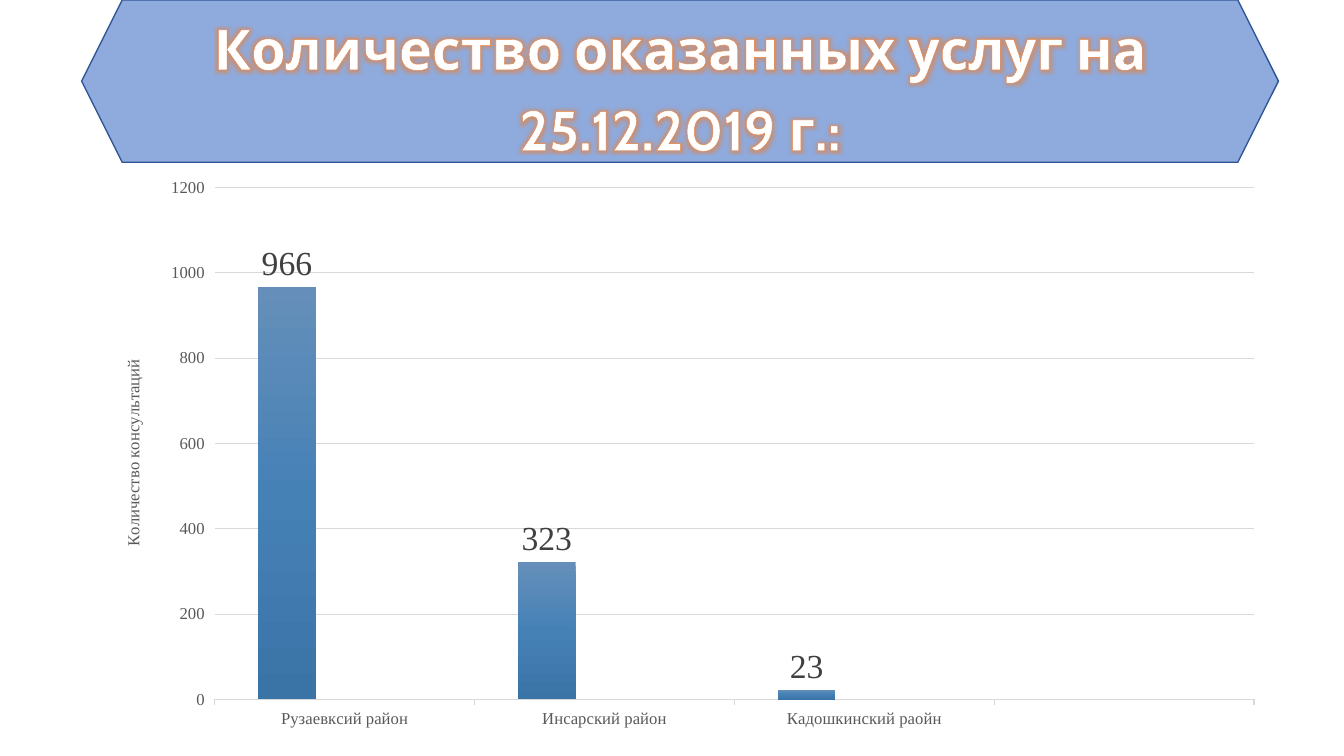
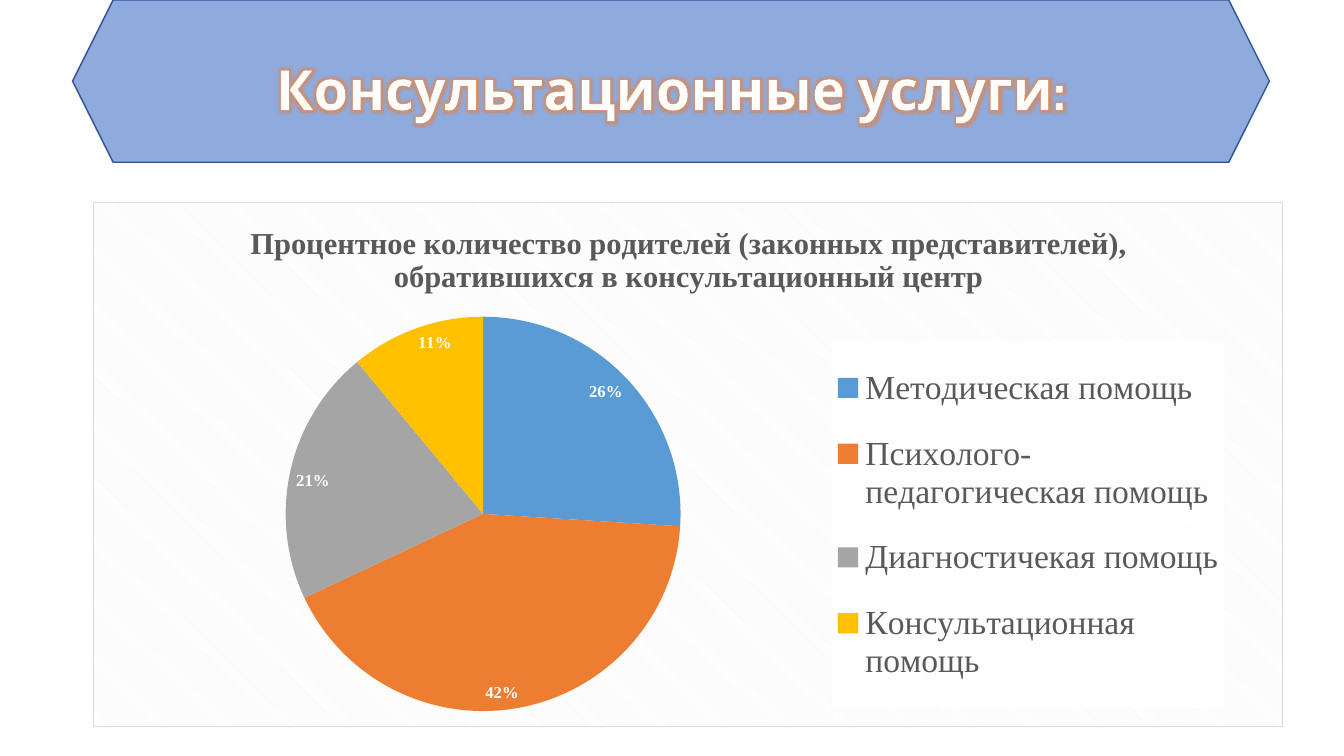
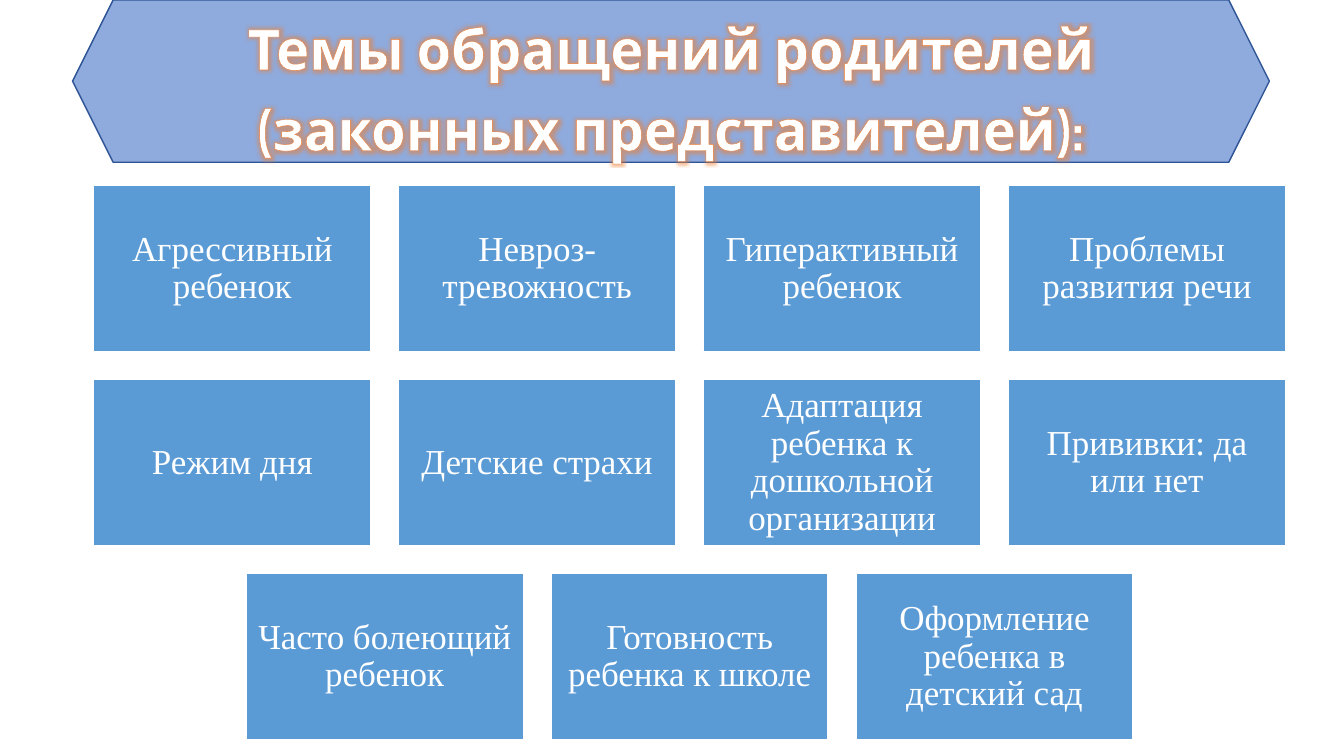
from dataclasses import dataclass

from pptx import Presentation
from pptx.chart.data import CategoryChartData
from pptx.dml.color import RGBColor
from pptx.enum.chart import (
    XL_CHART_TYPE, XL_LABEL_POSITION, XL_LEGEND_POSITION, XL_TICK_MARK,
)
from pptx.enum.shapes import MSO_SHAPE
from pptx.enum.text import MSO_ANCHOR, PP_ALIGN
from pptx.oxml import parse_xml
from pptx.oxml.ns import nsdecls, qn
from pptx.util import Inches, Pt


@dataclass(frozen=True)
class Theme:
    title_font: str = "Cabin"
    body_font: str = "Times New Roman"
    white: str = "FFFFFF"
    band: str = "8FAADC"
    band_line: str = "2F5597"
    glow: str = "ED7D31"
    tile: str = "5B9BD5"
    text: str = "595959"
    label: str = "404040"
    grid: str = "D9D9D9"
    pattern: str = "F2F2F2"
    slices: tuple = ("5B9BD5", "ED7D31", "A5A5A5", "FFC000")
    gradients: tuple = (
        ("658FBA", "4681B6", "3A73A6"),
        ("71A6DB", "559BDB", "448ACA"),
        ("B8CEE9", "AAC5E8", "94AFD2"),
    )
    title_size: float = 40
    tile_size: float = 25
    large_size: float = 24
    chart_title_size: float = 21.8
    small_size: float = 11.9


THEME = Theme()


def color(value):
    return RGBColor.from_string(value)


def style_font(font, size, value, name=THEME.body_font, bold=False):
    font.name = name
    font.size = Pt(size)
    font.bold = bold
    font.color.rgb = color(value)


def add_block(slide, preset, box, fill, line):
    shape = slide.shapes.add_shape(preset, *[Inches(length) for length in box])
    shape.shadow.inherit = False
    shape.fill.solid()
    shape.fill.fore_color.rgb = color(fill)
    shape.line.color.rgb = color(line)
    shape.line.width = Pt(1)
    return shape


def write_centered(shape, text, line_spacing):
    frame = shape.text_frame
    frame.word_wrap = True
    frame.vertical_anchor = MSO_ANCHOR.MIDDLE
    paragraph = frame.paragraphs[0]
    paragraph.alignment = PP_ALIGN.CENTER
    paragraph.line_spacing = line_spacing
    run = paragraph.add_run()
    run.text = text
    return run


def add_glow(run):
    properties = run.font._element
    outline = parse_xml(
        f'<a:ln {nsdecls("a")} w="6600"><a:solidFill>'
        f'<a:srgbClr val="{THEME.glow}"/></a:solidFill></a:ln>'
    )
    glow = parse_xml(
        f'<a:effectLst {nsdecls("a")}><a:glow rad="76200">'
        f'<a:srgbClr val="{THEME.glow}"><a:alpha val="50000"/></a:srgbClr>'
        '</a:glow></a:effectLst>'
    )
    properties.insert(0, outline)
    properties.find(qn("a:solidFill")).addnext(glow)


def add_title_band(slide, text, left=0.72):
    band = add_block(slide, MSO_SHAPE.HEXAGON, (left, 0, 11.87, 1.61),
                     THEME.band, THEME.band_line)
    run = write_centered(band, text, 1.2)
    style_font(run.font, THEME.title_size, THEME.white, THEME.title_font, True)
    add_glow(run)


def make_chart_data(categories, rows):
    data = CategoryChartData()
    data.categories = categories
    for number, values in enumerate(rows, 1):
        data.add_series(f"Series {number}", values)
    return data


def add_chart(slide, kind, box, data):
    lengths = [Inches(length) for length in box]
    chart = slide.shapes.add_chart(kind, *lengths, data).chart
    chart.font.name = THEME.body_font
    chart.font.size = Pt(10)
    return chart


def make_layout(chart_box, part_box, inner=False):
    left, top, width, height = chart_box
    part_left, part_top, part_width, part_height = part_box
    fractions = ((part_left - left) / width, (part_top - top) / height,
                 part_width / width, part_height / height)
    target = '<c:layoutTarget val="inner"/>' if inner else ""
    modes = "".join(f'<c:{edge}Mode val="edge"/>' for edge in "xy")
    sizes = "".join(f'<c:{key} val="{value:.5f}"/>'
                    for key, value in zip("xywh", fractions))
    return parse_xml(
        f'<c:layout {nsdecls("c")}><c:manualLayout>{target}{modes}{sizes}'
        '</c:manualLayout></c:layout>'
    )


def place_plot(chart, chart_box, plot_box):
    plot_area = chart._chartSpace.chart.plotArea
    for layout in plot_area.findall(qn("c:layout")):
        plot_area.remove(layout)
    plot_area.insert(0, make_layout(chart_box, plot_box, inner=True))


def fill_gradient(series, colors):
    stops = "".join(
        f'<a:gs pos="{position}"><a:srgbClr val="{value}"/></a:gs>'
        for position, value in zip((0, 50000, 100000), colors)
    )
    series._element.get_or_add_spPr().append(parse_xml(
        f'<a:gradFill {nsdecls("a")} rotWithShape="1"><a:gsLst>{stops}</a:gsLst>'
        '<a:lin ang="5400000" scaled="0"/></a:gradFill>'
    ))


def style_axes(chart):
    category_axis, value_axis = chart.category_axis, chart.value_axis
    for axis in (category_axis, value_axis):
        style_font(axis.tick_labels.font, THEME.small_size, THEME.text)
        axis.major_tick_mark = XL_TICK_MARK.OUTSIDE
        axis.minor_tick_mark = XL_TICK_MARK.NONE
    category_axis.format.line.color.rgb = color(THEME.grid)
    category_axis.format.line.width = Pt(1)
    value_axis.format.line.fill.background()
    value_axis.minimum_scale = 0
    value_axis.maximum_scale = 1200
    value_axis.major_unit = 200
    gridline = value_axis.major_gridlines.format.line
    gridline.color.rgb = color(THEME.grid)
    gridline.width = Pt(0.75)
    frame = value_axis.axis_title.text_frame
    frame._txBody.bodyPr.set("rot", "-5400000")
    frame._txBody.bodyPr.set("vert", "horz")
    run = frame.paragraphs[0].add_run()
    run.text = "Количество консультаций"
    style_font(run.font, THEME.small_size, THEME.text)


def add_district_chart(slide, box):
    data = make_chart_data(
        ("Рузаевксий район", "Инсарский район", "Кадошкинский раойн", ""),
        ((966, 323, 23, None), (None,) * 4, (None,) * 4),
    )
    chart = add_chart(slide, XL_CHART_TYPE.COLUMN_CLUSTERED, box, data)
    chart.has_title = False
    chart.has_legend = False
    style_axes(chart)
    plot = chart.plots[0]
    plot.gap_width = 150
    plot.overlap = 0
    plot.vary_by_categories = False
    sizes = (THEME.large_size, THEME.small_size, THEME.small_size)
    for series, gradient, size in zip(plot.series, THEME.gradients, sizes):
        series.invert_if_negative = False
        fill_gradient(series, gradient)
        labels = series.data_labels
        labels.show_value = True
        labels.position = XL_LABEL_POSITION.OUTSIDE_END
        style_font(labels.font, size, THEME.label)
    left, top, width, height = box
    place_plot(chart, box, (left + 1.11, top + 0.2, width - 1.35, height - 0.59))


def style_chart_background(chart):
    chart._chartSpace.chart.addnext(parse_xml(
        f'<c:spPr {nsdecls("c", "a")}><a:pattFill prst="dkDnDiag">'
        f'<a:fgClr><a:srgbClr val="{THEME.pattern}"/></a:fgClr>'
        f'<a:bgClr><a:srgbClr val="{THEME.white}"/></a:bgClr></a:pattFill>'
        f'<a:ln w="9525"><a:solidFill><a:srgbClr val="{THEME.grid}"/>'
        '</a:solidFill></a:ln></c:spPr>'
    ))


def style_legend(chart, chart_box, legend_box):
    chart.has_legend = True
    legend = chart.legend
    legend.position = XL_LEGEND_POSITION.RIGHT
    legend.include_in_layout = False
    style_font(legend.font, THEME.large_size, THEME.text)
    element = legend._element
    for layout in element.findall(qn("c:layout")):
        element.remove(layout)
    element.find(qn("c:legendPos")).addnext(make_layout(chart_box, legend_box))
    element.find(qn("c:txPr")).addprevious(parse_xml(
        f'<c:spPr {nsdecls("c", "a")}><a:solidFill>'
        f'<a:srgbClr val="{THEME.white}"><a:alpha val="80000"/></a:srgbClr>'
        '</a:solidFill></c:spPr>'
    ))


def add_help_chart(slide, box):
    data = make_chart_data(
        ("Методическая помощь", "Психолого-педагогическая помощь",
         "Диагностичекая помощь", "Консультационная помощь"),
        ((26, 42, 21, 11), (None,) * 4, (None,) * 4, (None,) * 4),
    )
    chart = add_chart(slide, XL_CHART_TYPE.PIE, box, data)
    style_chart_background(chart)
    chart.has_title = True
    run = chart.chart_title.text_frame.paragraphs[0].add_run()
    run.text = ("Процентное количество родителей (законных представителей), "
                "обратившихся в консультационный центр")
    style_font(run.font, THEME.chart_title_size, THEME.text, bold=True)
    left, top = box[:2]
    style_legend(chart, box, (left + 7.33, top + 1.38, 3.9, 3.65))
    plot = chart.plots[0]
    plot.vary_by_categories = True
    series = plot.series[0]
    for index, value in enumerate(THEME.slices):
        fill = series.points[index].format.fill
        fill.solid()
        fill.fore_color.rgb = color(value)
    labels = series.data_labels
    labels.show_value = False
    labels.show_percentage = True
    labels.number_format = "0%"
    labels.number_format_is_linked = False
    labels.position = XL_LABEL_POSITION.INSIDE_END
    style_font(labels.font, THEME.small_size, THEME.white, bold=True)
    chart.replace_data(data)
    place_plot(chart, box, (left + 1.91, top + 1.14, 3.92, 3.92))


def add_topic_grid(slide, box, rows):
    left, top, width, height = box
    columns = max(len(row) for row in rows)
    tile_width = width / (columns + (columns - 1) / 10)
    gap = tile_width / 10
    tile_height = (height - gap * (len(rows) - 1)) / len(rows)
    for row_index, row in enumerate(rows):
        row_width = len(row) * (tile_width + gap) - gap
        row_left = left + (width - row_width) / 2
        y = top + row_index * (tile_height + gap)
        for column, topic in enumerate(row):
            x = row_left + column * (tile_width + gap)
            tile = add_block(slide, MSO_SHAPE.RECTANGLE,
                             (x, y, tile_width, tile_height),
                             THEME.tile, THEME.white)
            frame = tile.text_frame
            frame.margin_left = frame.margin_right = Inches(0.1)
            frame.margin_top = frame.margin_bottom = Inches(0.1)
            run = write_centered(tile, topic, 0.9)
            style_font(run.font, THEME.tile_size, THEME.white)


def main():
    presentation = Presentation()
    presentation.slide_width = Inches(13.33)
    presentation.slide_height = Inches(7.5)
    blank = presentation.slide_layouts[6]

    slide = presentation.slides.add_slide(blank)
    add_district_chart(slide, (1.02, 1.66, 11.66, 5.67))
    add_title_band(slide, "Количество оказанных услуг на 25.12.2019 г.:", 0.81)

    slide = presentation.slides.add_slide(blank)
    add_title_band(slide, "Консультационные услуги:")
    add_help_chart(slide, (0.92, 2, 11.81, 5.21))

    slide = presentation.slides.add_slide(blank)
    add_title_band(slide, "Темы обращений родителей (законных представителей):")
    add_topic_grid(slide, (0.93, 1.84, 11.82, 5.5), (
        ("Агрессивный ребенок", "Невроз-тревожность",
         "Гиперактивный ребенок", "Проблемы развития речи"),
        ("Режим дня", "Детские страхи",
         "Адаптация ребенка к дошкольной организации", "Прививки: да или нет"),
        ("Часто болеющий ребенок", "Готовность ребенка к школе",
         "Оформление ребенка в детский сад"),
    ))

    presentation.save("out.pptx")


if __name__ == "__main__":
    main()
